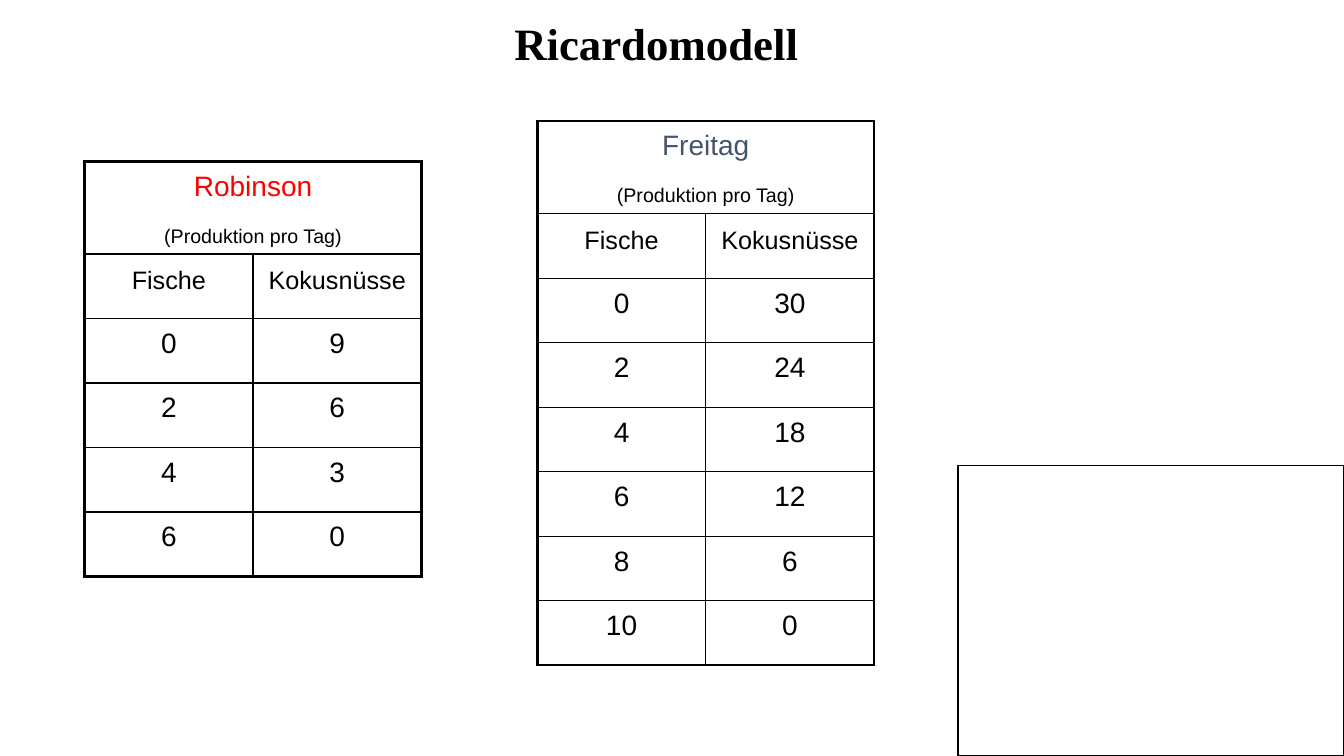
from lxml.etree import SubElement
from pptx import Presentation
from pptx.dml.color import RGBColor
from pptx.enum.shapes import MSO_SHAPE as SHAPE
from pptx.enum.text import MSO_ANCHOR as ANCHOR, PP_ALIGN as ALIGN
from pptx.oxml.ns import qn
from pptx.util import Emu, Pt

PX = 9144  # 100 px to the inch
BLACK = "000000"
THIN, THICK = 1, 2.25
HEAD_H, ROW_H, COL_W = 92, 64, 167


def px(n):
    return Emu(n * PX)


def color(hex_string):
    return RGBColor.from_string(hex_string)


def set_font(p, name, size, hex_string, bold=False):
    p.font.name = name
    p.font.size = Pt(size)
    p.font.bold = bold
    p.font.color.rgb = color(hex_string)
    p.alignment = ALIGN.CENTER


def set_borders(cell, **widths):
    tcPr = cell._tc.get_or_add_tcPr()
    for i, side in enumerate("LRTB"):
        ln = SubElement(tcPr, qn(f"a:ln{side}"), w=str(Pt(widths[side])))
        fill = SubElement(ln, qn("a:solidFill"))
        SubElement(fill, qn("a:srgbClr"), val=BLACK)
        tcPr.insert(i, ln)


def fill_cell(cell, *lines):
    """Each line is (text, size, colour)."""
    tf = cell.text_frame
    tf.text = "\n".join(text for text, _, _ in lines)
    for p, (_, size, hex_string) in zip(tf.paragraphs, lines):
        set_font(p, "Arial", size, hex_string)
        p.line_spacing = Pt(25.6)
        p.space_before = Pt(6.8)


def add_production_table(s, x, y, person, hex_string, output):
    n = len(output) + 2
    height = HEAD_H + (n - 1) * ROW_H
    table = s.shapes.add_table(n, 2, px(x), px(y), px(2 * COL_W), px(height)).table
    table.first_row = table.horz_banding = False
    for col in table.columns:
        col.width = px(COL_W)
    for i, row in enumerate(table.rows):
        row.height = px(ROW_H if i else HEAD_H)
        for j, cell in enumerate(row.cells):
            cell.fill.background()
            set_borders(cell,
                        L=THIN if j else THICK,
                        R=THICK if j or i == 0 else THIN,
                        T=THIN if i else THICK,
                        B=THICK if i == n - 1 else THIN)

    # Heading across both columns
    head = table.cell(0, 0)
    head.merge(table.cell(0, 1))
    fill_cell(head, (person, 20, hex_string), ("(Produktion pro Tag)", 14, BLACK))

    # Column names and values
    for i, values in enumerate([("Fische", "Kokusnüsse")] + output, start=1):
        for j, value in enumerate(values):
            fill_cell(table.cell(i, j), (str(value), 18 if i == 1 else 20, BLACK))


def add_title(s, x, y, w, h, text):
    tf = s.shapes.add_textbox(px(x), px(y), px(w), px(h)).text_frame
    tf.word_wrap = True
    tf.vertical_anchor = ANCHOR.MIDDLE
    p = tf.paragraphs[0]
    p.text = text
    set_font(p, "Times New Roman", 32, BLACK, bold=True)


def add_frame(s, x, y, w, h):
    sp = s.shapes.add_shape(SHAPE.RECTANGLE, px(x), px(y), px(w), px(h))
    sp.shadow.inherit = False
    sp.fill.background()
    sp.line.color.rgb = color(BLACK)
    sp.line.width = Pt(THIN)


def main():
    prs = Presentation()
    prs.slide_width, prs.slide_height = px(1333), px(750)
    s = prs.slides.add_slide(prs.slide_layouts[6])

    # Production tables
    add_production_table(s, 84, 160, "Robinson", "FF0000",
                         [(0, 9), (2, 6), (4, 3), (6, 0)])
    add_production_table(s, 533, 120, "Freitag", "44546A",
                         [(0, 30), (2, 24), (4, 18), (6, 12), (8, 6), (10, 0)])

    # Title and empty frame
    add_title(s, 202, 3, 898, 79, "Ricardomodell")
    add_frame(s, 950, 462, 383, 288)

    prs.save("out.pptx")


if __name__ == "__main__":
    main()
